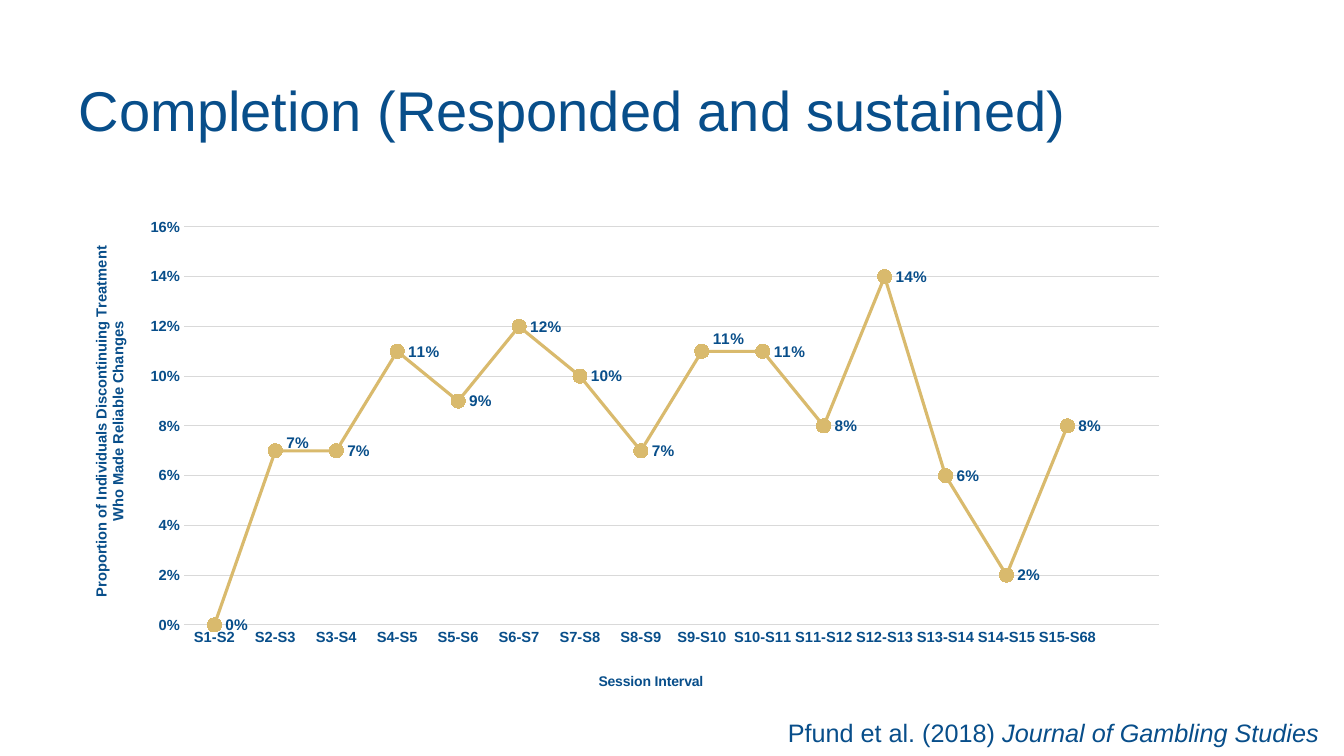
"""Build a slide with a line chart of treatment completion by session interval."""
import pptx
import pptx.chart.data
import pptx.dml.color
import pptx.enum.chart
import pptx.enum.text
import pptx.oxml
import pptx.oxml.ns
import pptx.util

PX = 914400 / 100.8
BLUE = pptx.dml.color.RGBColor(0x08, 0x4E, 0x8A)
GOLD = pptx.dml.color.RGBColor(0xD9, 0xBA, 0x6D)
GREY = pptx.dml.color.RGBColor(0xD9, 0xD9, 0xD9)
WHITE = pptx.dml.color.RGBColor(0xFF, 0xFF, 0xFF)
SHARES = [0, 0.07, 0.07, 0.11, 0.09, 0.12, 0.1, 0.07,
          0.11, 0.11, 0.08, 0.14, 0.06, 0.02, 0.08, None]
INTERVALS = [f"S{n}-S{n + 1}" for n in range(1, 15)] + ["S15-S68", ""]
RAISED_LABELS = {1: -8, 8: -13}


def emu(*lengths):
    """Turn px lengths into EMU."""
    return [pptx.util.Emu(round(length * PX)) for length in lengths]


def apply(target, values):
    """Set each attribute of target from a dict."""
    for name, value in values.items():
        setattr(target, name, value)


def style_font(font, size, **values):
    """Give a font the slide's typeface and colour."""
    apply(font, {"name": "Arial", "size": pptx.util.Pt(size), **values})
    font.color.rgb = BLUE


def style_line(line, colour, width):
    """Give a line its colour and width."""
    line.color.rgb = colour
    line.width = pptx.util.Pt(width)


def add_text(page, box, spans, size, **frame_values):
    """Place one paragraph of (text, italic) spans in a box."""
    frame = page.shapes.add_textbox(*emu(*box)).text_frame
    apply(frame, {"word_wrap": True, **frame_values})
    para = frame.paragraphs[0]
    for text, italic in spans:
        span = para.add_run()
        span.text = text
        style_font(span.font, size, italic=italic)
    return para


def make_layout(sides, inner=False):
    """Make a manual chart layout from a dict of fractions."""
    target = '<c:layoutTarget val="inner"/>' if inner else ""
    modes = "" if sides.get("offset") else '<c:xMode val="edge"/><c:yMode val="edge"/>'
    parts = "".join(f'<c:{side} val="{sides[side]:.4f}"/>'
                    for side in ("x", "y", "w", "h") if side in sides)
    return pptx.oxml.parse_xml(
        f'<c:layout {pptx.oxml.ns.nsdecls("c")}><c:manualLayout>'
        f'{target}{modes}{parts}</c:manualLayout></c:layout>')


def replace_layout(parent, layout, after=None):
    """Put a layout into a chart element in place of its present one."""
    for old in parent.findall(pptx.oxml.ns.qn("c:layout")):
        parent.remove(old)
    before = parent.find(pptx.oxml.ns.qn(after)) if after else None
    if before is None:
        parent.insert(0, layout)
    else:
        before.addnext(layout)


def style_axis(axis, lines, size, layout):
    """Format an axis and write its title."""
    apply(axis, {"major_tick_mark": pptx.enum.chart.XL_TICK_MARK.NONE,
                 "minor_tick_mark": pptx.enum.chart.XL_TICK_MARK.NONE})
    style_font(axis.tick_labels.font, 10.5, bold=True)
    frame = axis.axis_title.text_frame
    for index, text in enumerate(lines):
        para = frame.add_paragraph() if index else frame.paragraphs[0]
        span = para.add_run()
        span.text = text
        style_font(span.font, size, bold=True)
    replace_layout(axis.axis_title._element, layout, "c:tx")


def style_series(series, height):
    """Format the line, its markers and its value labels."""
    series.smooth = False
    style_line(series.format.line, GOLD, 2.25)
    apply(series.marker, {"style": pptx.enum.chart.XL_MARKER_STYLE.CIRCLE, "size": 10})
    series.marker.format.fill.solid()
    series.marker.format.fill.fore_color.rgb = GOLD
    style_line(series.marker.format.line, GOLD, 0.75)
    right = pptx.enum.chart.XL_LABEL_POSITION.RIGHT
    labels = series.data_labels
    apply(labels, {"show_value": True, "number_format": "0%",
                   "number_format_is_linked": False, "position": right})
    style_font(labels.font, 11, bold=True)
    for index, shift in RAISED_LABELS.items():
        label = series.points[index].data_label
        label.position = right
        style_font(label.font, 11, bold=True)
        element = labels._element.xpath(f'c:dLbl[c:idx/@val="{index}"]')[0]
        layout = make_layout({"x": 0, "y": shift / height, "offset": True})
        replace_layout(element, layout, "c:idx")


def add_completion_chart(page, box):
    """Place the line chart in a box."""
    width, height = box[2:]
    data = pptx.chart.data.CategoryChartData(number_format="0%")
    data.categories = INTERVALS
    data.add_series("Series 1", SHARES)
    chart = page.shapes.add_chart(
        pptx.enum.chart.XL_CHART_TYPE.LINE_MARKERS, *emu(*box), data).chart
    apply(chart, {"has_legend": False, "has_title": False})
    style_font(chart.font, 10)
    chart.plots[0].vary_by_categories = False
    plot = {"x": 116 / width, "y": 18 / height, "w": 975 / width, "h": 398 / height}
    replace_layout(chart._chartSpace.chart.plotArea, make_layout(plot, inner=True))

    style_axis(chart.category_axis, ["Session Interval"], 10,
               make_layout({"x": 528 / width, "y": 461 / height}))
    style_line(chart.category_axis.format.line, GREY, 0.75)

    values = chart.value_axis
    style_axis(values, ["Proportion of Individuals Discontinuing Treatment",
                        "Who Made Reliable Changes"], 10.5,
               make_layout({"x": 20 / width, "y": 34 / height}))
    apply(values, {"minimum_scale": 0, "maximum_scale": 0.16, "major_unit": 0.02})
    apply(values.tick_labels, {"number_format": "0%", "number_format_is_linked": False})
    values.format.line.fill.background()
    style_line(values.major_gridlines.format.line, GREY, 0.75)
    style_series(chart.plots[0].series[0], height)


def build_slide(deck):
    """Add the slide with its title, chart and citation."""
    page = deck.slides.add_slide(deck.slide_layouts[6])
    page.background.fill.solid()
    page.background.fill.fore_color.rgb = WHITE
    title = add_text(page, (69, 40, 1139, 146),
                     [("Completion (Responded and sustained)", False)], 40,
                     vertical_anchor=pptx.enum.text.MSO_ANCHOR.MIDDLE)
    title.line_spacing = 0.9
    add_completion_chart(page, (68, 209, 1113, 488))
    add_text(page, (778, 712, 566, 40),
             [("Pfund et al. (2018) ", False), ("Journal of Gambling Studies", True)], 18)


def main():
    """Build and save the deck."""
    deck = pptx.Presentation()
    deck.slide_width, deck.slide_height = emu(1344, 756)
    build_slide(deck)
    deck.save("out.pptx")


if __name__ == "__main__":
    main()
